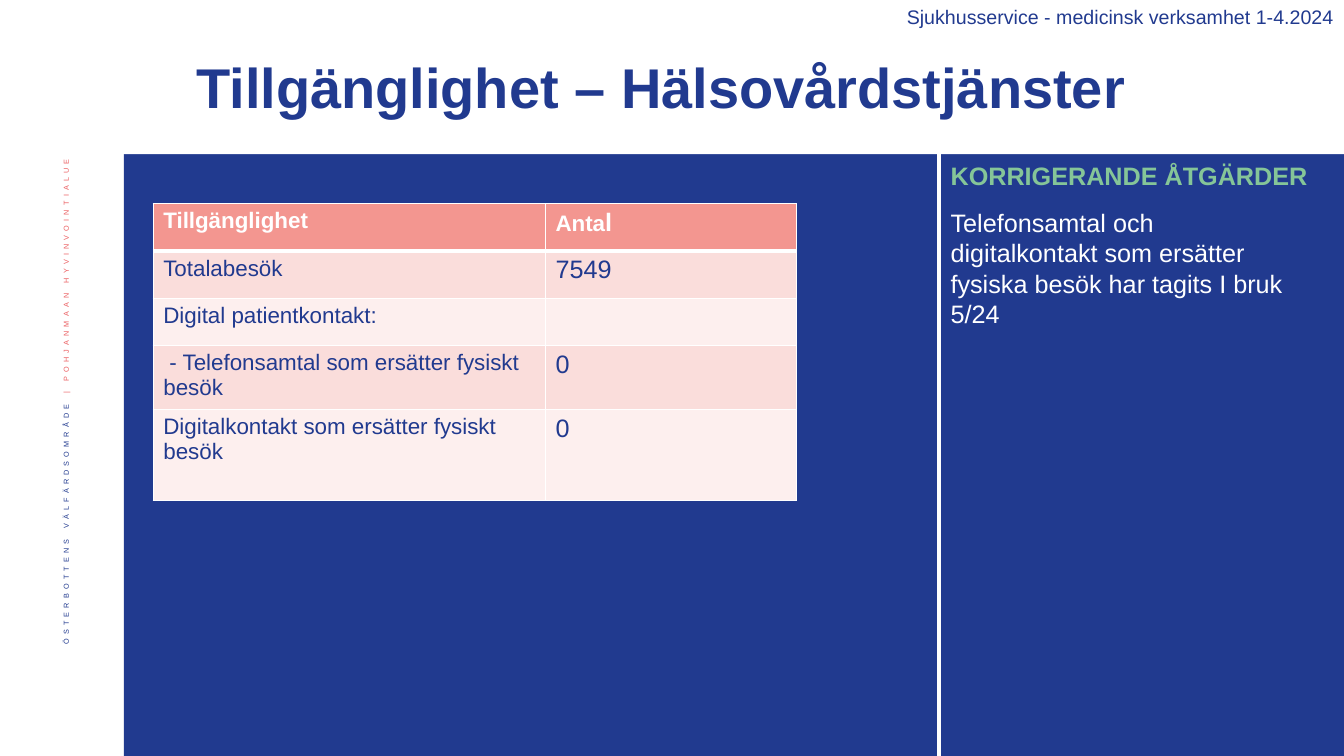
import pptx
import pptx.util
import pptx.dml.color
import pptx.enum.shapes
import pptx.enum.text
from lxml import etree
from pptx.oxml.ns import qn
from pptx.util import Inches, Pt

COLORS = {
    "navy": "213A8F",
    "coral": "EB5C5F",
    "green": "85C598",
    "white": "FFFFFF",
    "header": "F39690",
    "band_dark": "FADDDB",
    "band_light": "FDEFEE",
}
FONT = "Arial"
ALIGN = pptx.enum.text.PP_ALIGN
ANCHOR = pptx.enum.text.MSO_ANCHOR

# Each cell is a list of (text, size) runs.
TABLE_ROWS = [
    ([("Tillgänglighet", 16)], [("Anta", 16), ("l", 18)]),
    ([("Totalabesök", 16)], [("7549", 18)]),
    ([("Digital patientkontakt:", 16)], []),
    ([("- Telefonsamtal som ersätter fysiskt besök", 16)], [("0", 18)]),
    ([("Digitalkontakt som ersätter fysiskt besök", 16)], [("0", 18)]),
]
COLUMN_WIDTHS = [3.89, 2.49]
ROW_HEIGHTS = [0.47, 0.47, 0.47, 0.63, 0.9]
INDENTED_ROW = 3


def rgb(name):
    return pptx.dml.color.RGBColor.from_string(COLORS[name])


def set_font(font, size, color, bold=False):
    font.name = FONT
    font.size = Pt(size)
    font.bold = bold
    font.color.rgb = rgb(color)


def add_text(slide, box, text, size, color, bold=False, align=ALIGN.LEFT, anchor=ANCHOR.TOP):
    shape = slide.shapes.add_textbox(*map(Inches, box))
    frame = shape.text_frame
    frame.word_wrap = True
    frame.vertical_anchor = anchor
    paragraph = frame.paragraphs[0]
    paragraph.text = text
    paragraph.alignment = align
    set_font(paragraph.font, size, color, bold)
    return shape


def add_panel(slide, box, color):
    shape = slide.shapes.add_shape(pptx.enum.shapes.MSO_SHAPE.RECTANGLE, *map(Inches, box))
    shape.shadow.inherit = False
    shape.fill.solid()
    shape.fill.fore_color.rgb = rgb(color)
    shape.line.fill.background()


def add_divider(slide, x, top, bottom):
    line = slide.shapes.add_connector(
        pptx.enum.shapes.MSO_CONNECTOR.STRAIGHT, Inches(x), Inches(top), Inches(x), Inches(bottom))
    line.line.color.rgb = rgb("white")
    line.line.width = Pt(3)
    etree.SubElement(line._element.spPr, qn("a:effectLst"))


def add_side_label(slide, box):
    """Organisation name in small raised letters, reading upwards."""
    shape = slide.shapes.add_textbox(*map(Inches, box))
    frame = shape.text_frame
    frame.word_wrap = True
    frame.vertical_anchor = ANCHOR.MIDDLE
    frame._txBody.bodyPr.set("vert", "vert270")
    paragraph = frame.paragraphs[0]
    paragraph.alignment = ALIGN.RIGHT
    paragraph.line_spacing = 0.9
    for text, color in (("ÖSTERBOTTENS VÄLFÄRDSOMRÅDE ", "navy"),
                        ("| POHJANMAAN HYVINVOINTIALUE ", "coral")):
        run = paragraph.add_run()
        run.text = text
        set_font(run.font, 9, color)
        properties = run.font._element
        properties.set("baseline", "30000")
        properties.set("spc", "300")


def set_borders(cell, top, bottom):
    properties = cell._tc.get_or_add_tcPr()
    for side, width in (("L", 1), ("R", 1), ("T", top), ("B", bottom)):
        line = etree.SubElement(properties, qn(f"a:ln{side}"), w=str(Pt(width)))
        fill = etree.SubElement(line, qn("a:solidFill"))
        etree.SubElement(fill, qn("a:srgbClr"), val=COLORS["white"])


def fill_cell(cell, runs, row):
    is_header = row == 0
    set_borders(cell, top=3 if row == 1 else 1, bottom=3 if is_header else 1)
    cell.fill.solid()
    band = "band_dark" if row % 2 else "band_light"
    cell.fill.fore_color.rgb = rgb("header" if is_header else band)
    paragraph = cell.text_frame.paragraphs[0]
    for text, size in runs:
        run = paragraph.add_run()
        run.text = text
        set_font(run.font, size, "white" if is_header else "navy", is_header)


def add_availability_table(slide, left, top):
    frame = slide.shapes.add_table(
        len(TABLE_ROWS), len(COLUMN_WIDTHS), Inches(left), Inches(top),
        Inches(sum(COLUMN_WIDTHS)), Inches(sum(ROW_HEIGHTS)))
    table = frame.table
    for column, width in zip(table.columns, COLUMN_WIDTHS):
        column.width = Inches(width)
    for row, (cells, height) in enumerate(zip(TABLE_ROWS, ROW_HEIGHTS)):
        table.rows[row].height = Inches(height)
        for column, runs in enumerate(cells):
            fill_cell(table.cell(row, column), runs, row)
    paragraph = table.cell(INDENTED_ROW, 0).text_frame.paragraphs[0]
    paragraph._p.get_or_add_pPr().set("indent", str(Inches(0.06)))


def add_header(slide, left, width):
    title = add_text(slide, (left + 0.7, 0.47, 10.44, 0.85), "Tillgänglighet – Hälsovårdstjänster",
                     40, "navy", bold=True, anchor=ANCHOR.MIDDLE)
    title.text_frame.paragraphs[0].line_spacing = 0.9
    add_text(slide, (left + width - 4.8, 0, 4.8, 0.34),
             "Sjukhusservice - medicinsk verksamhet 1-4.2024", 14, "navy", align=ALIGN.RIGHT)


def add_actions(slide, left, top):
    add_text(slide, (left, top, 3.94, 0.4), "KORRIGERANDE ÅTGÄRDER", 18, "green", bold=True)
    add_text(slide, (left, top + 0.47, 3.73, 1.31),
             "Telefonsamtal och digitalkontakt som ersätter fysiska besök har tagits I bruk 5/24",
             18, "white")


def main():
    presentation = pptx.Presentation()
    presentation.slide_width = Inches(13.33)
    presentation.slide_height = Inches(7.5)
    slide = presentation.slides.add_slide(presentation.slide_layouts[6])
    add_side_label(slide, (0.42, 1.42, 0.52, 5.73))
    add_panel(slide, (1.23, 0, 12.1, 7.5), "navy")
    add_panel(slide, (1.15, 0, 12.18, 1.53), "white")
    add_divider(slide, 9.31, 0.97, 7.5)
    add_header(slide, 1.15, 12.18)
    add_actions(slide, 9.33, 1.54)
    add_availability_table(slide, 1.52, 2.02)
    presentation.save("out.pptx")


if __name__ == "__main__":
    main()
